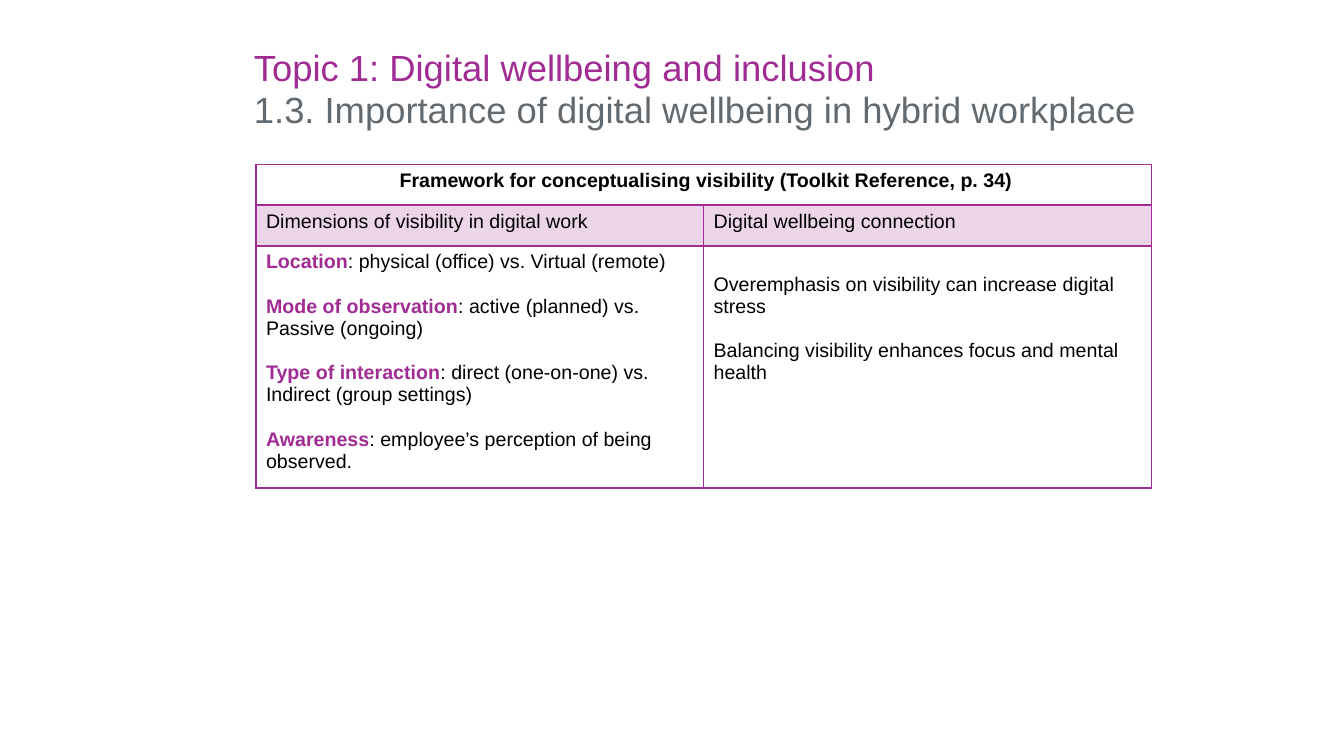
from lxml import etree
from pptx import Presentation
from pptx import util as u
from pptx.dml.color import RGBColor
from pptx.enum import text
from pptx.oxml import ns

PURPLE, GREY, BLACK, LILAC = "A02B93", "636A6F", "000000", "ECD5E9"


def colour(value):
    return RGBColor.from_string(value)


class Slide:
    """Draws styled titles and tables on one blank page."""

    font = "Arial"
    text_size = 14
    title_size = 26

    def __init__(self, deck):
        self.page = deck.slides.add_slide(deck.slide_layouts[6])

    def style(self, font, size, shade, bold=False):
        font.name, font.size, font.bold = self.font, u.Pt(size), bold
        font.color.rgb = colour(shade)

    def title(self, left, top, width, height, lines):
        box = self.page.shapes.add_textbox(*map(u.Cm, (left, top, width, height)))
        frame = box.text_frame
        frame.word_wrap = True
        for index, (words, shade) in enumerate(lines):
            para = frame.paragraphs[0] if index == 0 else frame.add_paragraph()
            para.text = words
            para.line_spacing = 0.95
            self.style(para.font, self.title_size, shade)

    def table(self, left, top, widths, heights):
        frame = self.page.shapes.add_table(
            len(heights), len(widths), u.Cm(left), u.Cm(top),
            u.Cm(sum(widths)), u.Cm(sum(heights)))
        table = frame.table
        table.first_row = table.horz_banding = False
        for column, width in zip(table.columns, widths):
            column.width = u.Cm(width)
        for row, height in zip(table.rows, heights):
            row.height = u.Cm(height)
        return table

    def borders(self, cell, shade, top=1, bottom=1):
        properties = cell._tc.get_or_add_tcPr()
        sides = {"lnL": 1, "lnR": 1, "lnT": top, "lnB": bottom}
        for index, (side, points) in enumerate(sides.items()):
            line = etree.Element(ns.qn(f"a:{side}"), w=str(u.Pt(points)))
            fill = etree.SubElement(line, ns.qn("a:solidFill"))
            etree.SubElement(fill, ns.qn("a:srgbClr"), val=shade)
            properties.insert(index, line)

    def fill(self, cell, shade=None):
        if shade:
            cell.fill.solid()
            cell.fill.fore_color.rgb = colour(shade)
        else:
            cell.fill.background()

    def cell_text(self, cell, entries, bold=False):
        frame = cell.text_frame
        for index, (term, words) in enumerate(entries):
            para = frame.paragraphs[0] if index == 0 else frame.add_paragraph()
            if index:
                para.space_before = u.Pt(16)
            if term:
                span = para.add_run()
                span.text = term
                self.style(span.font, self.text_size, PURPLE, True)
                span = para.add_run()
                span.text = words
                self.style(span.font, self.text_size, BLACK)
            else:
                para.text = words
                self.style(para.font, self.text_size, BLACK, bold)


def main():
    deck = Presentation()
    deck.slide_width, deck.slide_height = u.Cm(33.87), u.Cm(19.05)
    slide = Slide(deck)
    slide.title(6.15, 1.1, 27.38, 2.6, [
        ("Topic 1: Digital wellbeing and inclusion", PURPLE),
        ("1.3. Importance of digital wellbeing in hybrid workplace", GREY),
    ])

    table = slide.table(6.45, 4.14, [11.28, 11.28], [1.03, 1.03, 5.79])
    heading = table.cell(0, 0)
    heading.merge(table.cell(0, 1))
    rules = [(1, 2), (2, 1), (1, 1)]
    for row, (fill, (top, bottom)) in enumerate(zip([None, LILAC, None], rules)):
        for column in range(2):
            cell = table.cell(row, column)
            slide.fill(cell, fill)
            slide.borders(cell, PURPLE, top, bottom)

    slide.cell_text(heading, [("", "Framework for conceptualising visibility (Toolkit Reference, p. 34)")], bold=True)
    heading.text_frame.paragraphs[0].alignment = text.PP_ALIGN.CENTER
    heading.margin_left = u.Cm(0.39)
    slide.cell_text(table.cell(1, 0), [("", "Dimensions of visibility in digital work")])
    slide.cell_text(table.cell(1, 1), [("", "Digital wellbeing connection")])
    slide.cell_text(table.cell(2, 0), [
        ("Location", ": physical (office) vs. Virtual (remote)"),
        ("Mode of observation", ": active (planned) vs. Passive (ongoing)"),
        ("Type of interaction", ": direct (one-on-one) vs. Indirect (group settings)"),
        ("Awareness", ": employee’s perception of being observed."),
    ])
    connection = table.cell(2, 1)
    slide.cell_text(connection, [
        ("", "Overemphasis on visibility can increase digital stress"),
        ("", "Balancing visibility enhances focus and mental health"),
    ])
    connection.margin_top = u.Cm(0.69)
    deck.save("out.pptx")


if __name__ == "__main__":
    main()
